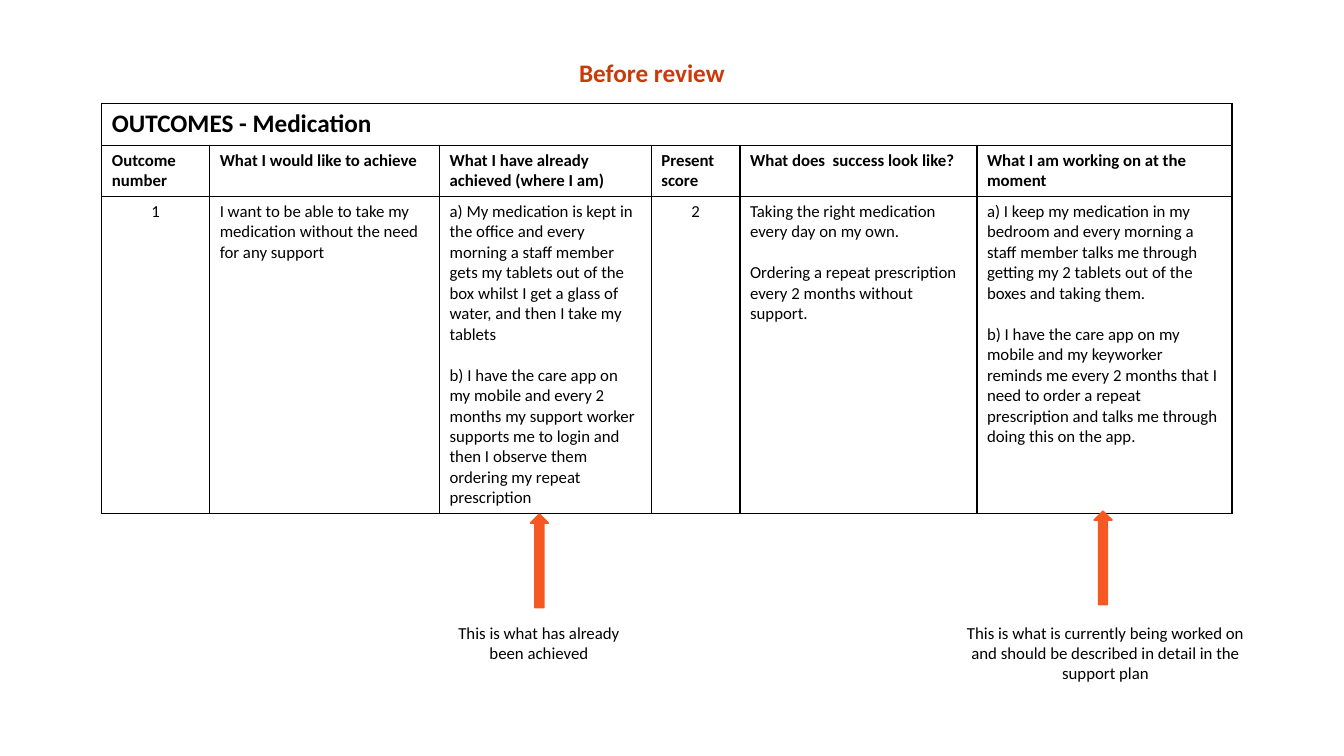
"""Build the slide showing a medication outcomes table before review."""
from lxml import etree
from pptx import Presentation
from pptx.dml.color import RGBColor
from pptx.enum import shapes, text
from pptx.oxml import ns
from pptx.util import Inches, Pt

BLACK = RGBColor(0x00, 0x00, 0x00)
RUST = RGBColor(0xC8, 0x3A, 0x09)
ORANGE = RGBColor(0xF5, 0x58, 0x22)
LEFT, CENTER = text.PP_ALIGN.LEFT, text.PP_ALIGN.CENTER

TITLE = "Before review"
TABLE_TITLE = "OUTCOMES - Medication"
COLUMNS = [
    (1.07, "Outcome number", CENTER, ["1"]),
    (2.28, "What I would like to achieve", LEFT,
     ["I want to be able to take my medication without the need for any support"]),
    (2.1, "What I have already achieved (where I am)", LEFT,
     ["a) My medication is kept in the office and every morning a staff member gets "
      "my tablets out of the box whilst I get a glass of water, and then I take my tablets",
      "b) I have the care app on my mobile and every 2 months my support worker supports "
      "me to login and then I observe them ordering my repeat prescription"]),
    (0.88, "Present score", CENTER, ["2"]),
    (2.35, "What does  success look like?", LEFT,
     ["Taking the right medication every day on my own.",
      "Ordering a repeat prescription every 2 months without support."]),
    (2.53, "What I am working on at the moment", LEFT,
     ["a) I keep my medication in my bedroom and every morning a staff member talks me "
      "through getting my 2 tablets out of the boxes and taking them.",
      "b) I have the care app on my mobile and my keyworker reminds me every 2 months that "
      "I need to order a repeat prescription and talks me through doing this on the app."]),
]
ROW_HEIGHTS = [0.41, 0.5, 3.15]
TABLE_LEFT, TABLE_TOP = 1.01, 1.03
ARROW_SIZE = (0.18, 0.93)
NOTES = [
    ("This is what has already been achieved", (4.32, 6.13, 2.05, 0.5), (5.26, 5.1)),
    ("This is what is currently being worked on and should be described in detail in "
     "the support plan", (9.43, 6.13, 3.07, 0.71), (10.85, 5.07)),
]
FRAME_FORMAT = {"word_wrap": True, "auto_size": text.MSO_AUTO_SIZE.NONE,
                "vertical_anchor": text.MSO_ANCHOR.TOP}


def apply(target, values):
    for name, value in values.items():
        setattr(target, name, value)


def write(frame, lines, size=12, bold=False, color=BLACK, alignment=LEFT):
    for index, line in enumerate(lines):
        paragraph = frame.add_paragraph() if index else frame.paragraphs[0]
        paragraph.text = line
        apply(paragraph, {"alignment": alignment,
                          "space_before": Pt(14.65 if index else 0)})
        apply(paragraph.font, {"name": "Calibri", "size": Pt(size), "bold": bold})
        paragraph.font.color.rgb = color


def outline_cell(cell):
    properties = cell._tc.get_or_add_tcPr()
    for side in ("a:lnL", "a:lnR", "a:lnT", "a:lnB"):
        line = etree.SubElement(properties, ns.qn(side), w=str(Pt(1)))
        fill = etree.SubElement(line, ns.qn("a:solidFill"))
        etree.SubElement(fill, ns.qn("a:srgbClr"), val=str(BLACK))
    cell.fill.background()


def add_title(slide):
    title = slide.shapes.title
    apply(title, {"left": Inches(5.44), "top": Inches(0.52),
                  "width": Inches(2.05), "height": Inches(0.4)})
    apply(title.text_frame, FRAME_FORMAT)
    write(title.text_frame, [TITLE], 18, True, RUST, CENTER)


def add_outcomes(slide):
    widths = [column[0] for column in COLUMNS]
    table = slide.shapes.add_table(
        len(ROW_HEIGHTS), len(COLUMNS), Inches(TABLE_LEFT), Inches(TABLE_TOP),
        Inches(sum(widths)), Inches(sum(ROW_HEIGHTS))).table
    apply(table, {"first_row": False, "horz_banding": False})
    for row, height in zip(table.rows, ROW_HEIGHTS):
        row.height = Inches(height)
    for cell in table.iter_cells():
        outline_cell(cell)
    table.cell(0, 0).merge(table.cell(0, len(COLUMNS) - 1))
    write(table.cell(0, 0).text_frame, [TABLE_TITLE], 18, True)
    for index, (width, heading, alignment, lines) in enumerate(COLUMNS):
        table.columns[index].width = Inches(width)
        write(table.cell(1, index).text_frame, [heading], bold=True)
        write(table.cell(2, index).text_frame, lines, alignment=alignment)


def add_note(slide, note, box, arrow_position):
    arrow = slide.shapes.add_shape(
        shapes.MSO_SHAPE.UP_ARROW, *map(Inches, arrow_position + ARROW_SIZE))
    arrow.shadow.inherit = False
    arrow.fill.solid()
    arrow.fill.fore_color.rgb = arrow.line.color.rgb = ORANGE
    arrow.line.width = Pt(1)
    frame = slide.shapes.add_textbox(*map(Inches, box)).text_frame
    apply(frame, FRAME_FORMAT)
    write(frame, [note], alignment=CENTER)


def main():
    presentation = Presentation()
    apply(presentation, {"slide_width": Inches(13.33), "slide_height": Inches(7.5)})
    slide = presentation.slides.add_slide(presentation.slide_layouts[5])
    add_title(slide)
    add_outcomes(slide)
    for note in NOTES:
        add_note(slide, *note)
    presentation.save("out.pptx")


if __name__ == "__main__":
    main()
